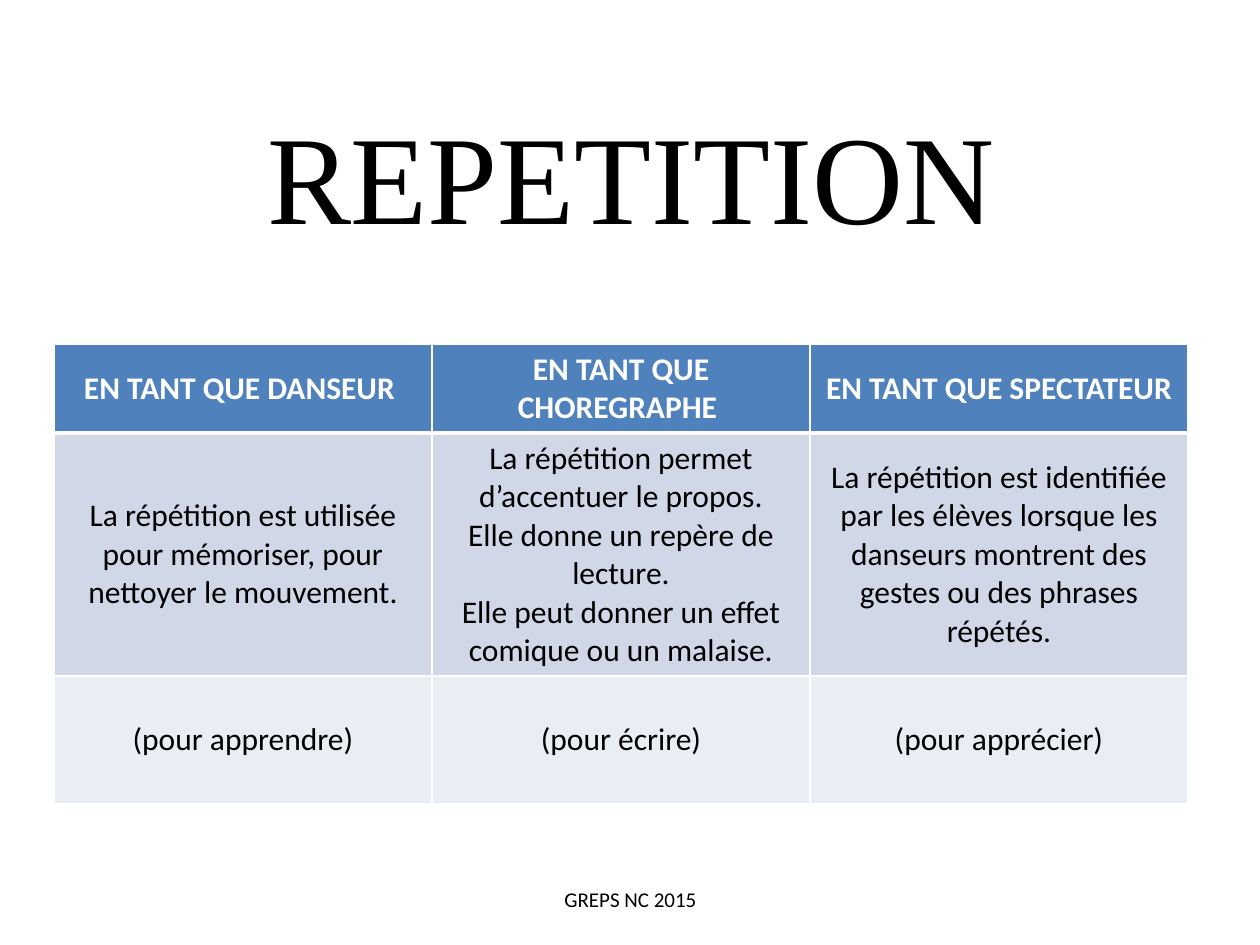
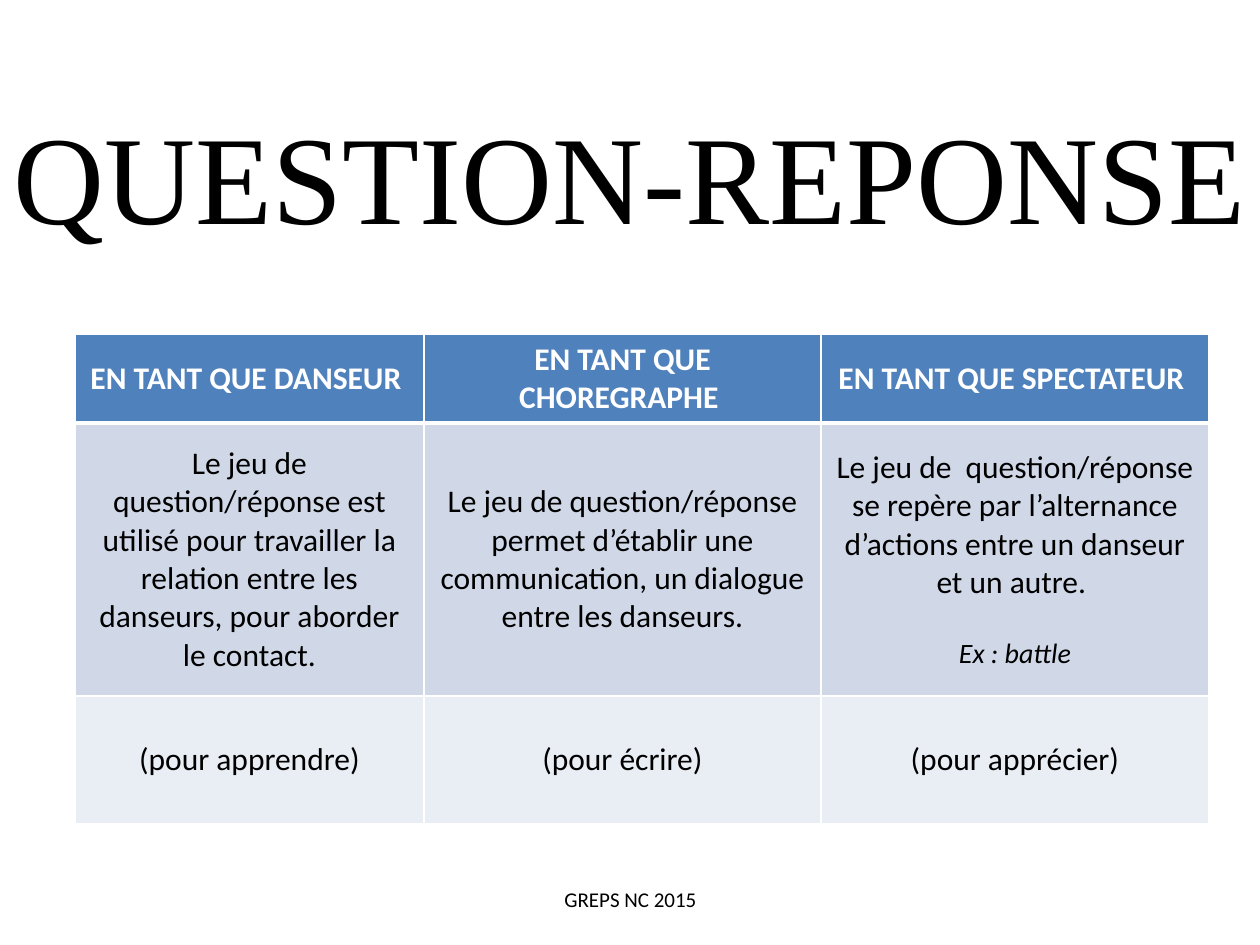
"""Build two dance vocabulary slides, each with a title, a table of three roles and a footer."""
from lxml.etree import SubElement
from pptx import Presentation
from pptx.dml.color import RGBColor
from pptx.enum.text import MSO_ANCHOR as Anchor, PP_ALIGN as Align
from pptx.oxml.ns import qn
from pptx.util import Emu, Pt

SCALE = 914400 / 126
BLACK, WHITE = "000000", "FFFFFF"
ROW_FILLS = ["4F81BD", "D0D8E8", "E9EDF4"]
TITLE = {"name": "Times New Roman", "size": Pt(72), "color": BLACK}
HEADER = {"name": "Calibri", "size": Pt(18), "bold": True, "color": WHITE}
BODY = {**HEADER, "bold": False, "color": BLACK}
EXAMPLE = {**BODY, "size": Pt(16), "italic": True}
FOOTER = {"name": "Calibri", "size": Pt(12), "color": BLACK}
ROLES = ["EN TANT QUE DANSEUR ", "EN TANT QUE CHOREGRAPHE ", "EN TANT QUE SPECTATEUR "]
GOALS = ["(pour apprendre)", "(pour écrire)", "(pour apprécier)"]

SLIDES = [
    {
        "title": "REPETITION", "title_box": (64, 96, 1134, 157),
        "table_at": (54, 344), "columns": [378, 378, 378], "rows": [89, 243, 128],
        "uses": [
            ["La répétition est utilisée pour mémoriser, pour nettoyer le mouvement."],
            ["La répétition permet d’accentuer le propos.",
             "Elle donne un repère de lecture.",
             "Elle peut donner un effet comique ou un malaise."],
            ["La répétition est identifiée par les élèves lorsque les danseurs "
             "montrent des gestes ou des phrases répétés."],
        ],
    },
    {
        "title": "QUESTION-REPONSE", "title_box": (0, 96, 1260, 157),
        "table_at": (75, 334), "columns": [349, 397, 388], "rows": [89, 273, 128],
        "uses": [
            ["Le jeu de question/réponse est utilisé pour travailler la relation "
             "entre les danseurs, pour aborder le contact."],
            ["Le jeu de question/réponse permet d’établir une communication, "
             "un dialogue entre les danseurs."],
            ["Le jeu de  question/réponse se repère par l’alternance d’actions "
             "entre un danseur et un autre. ", "Ex : battle"],
        ],
    },
]


def px(*lengths):
    return [Emu(round(length * SCALE)) for length in lengths]


def write(frame, lines, style):
    frame.word_wrap = True
    for index, line in enumerate(lines):
        para = frame.paragraphs[0] if index == 0 else frame.add_paragraph()
        para.alignment = Align.CENTER
        is_example = line.startswith("Ex :")
        if is_example:
            para.space_before = Pt(19.5)
        span = para.add_run()
        span.text = line
        for key, value in (EXAMPLE if is_example else style).items():
            if key == "color":
                span.font.color.rgb = RGBColor.from_string(value)
            else:
                setattr(span.font, key, value)


deck = Presentation()
deck.slide_width, deck.slide_height = px(1260, 945)

for content in SLIDES:
    page = deck.slides.add_slide(deck.slide_layouts[6])
    title = page.shapes.add_textbox(*px(*content["title_box"])).text_frame
    title.vertical_anchor = Anchor.MIDDLE
    write(title, [content["title"]], TITLE)

    columns, rows = content["columns"], content["rows"]
    table = page.shapes.add_table(
        len(rows), len(columns), *px(*content["table_at"], sum(columns), sum(rows))).table
    for column, width in zip(table.columns, px(*columns)):
        column.width = width
    for row, height in zip(table.rows, px(*rows)):
        row.height = height

    texts = [[[role] for role in ROLES], content["uses"], [[goal] for goal in GOALS]]
    for row_index, row_texts in enumerate(texts):
        borders = {"a:lnL": 1, "a:lnR": 1,
                   "a:lnT": 3 if row_index == 1 else 1,
                   "a:lnB": 3 if row_index == 0 else 1}
        for column_index, lines in enumerate(row_texts):
            cell = table.cell(row_index, column_index)
            cell.vertical_anchor = Anchor.MIDDLE
            write(cell.text_frame, lines, BODY if row_index else HEADER)
            properties = cell._tc.get_or_add_tcPr()
            for side, points in borders.items():
                line = SubElement(properties, qn(side), w=str(Pt(points)))
                SubElement(SubElement(line, qn("a:solidFill")), qn("a:srgbClr"), val=WHITE)
            cell.fill.solid()
            cell.fill.fore_color.rgb = RGBColor.from_string(ROW_FILLS[row_index])

    footer = page.shapes.add_textbox(*px(551, 880, 159, 38)).text_frame
    write(footer, ["GREPS NC 2015"], FOOTER)

deck.save("out.pptx")
